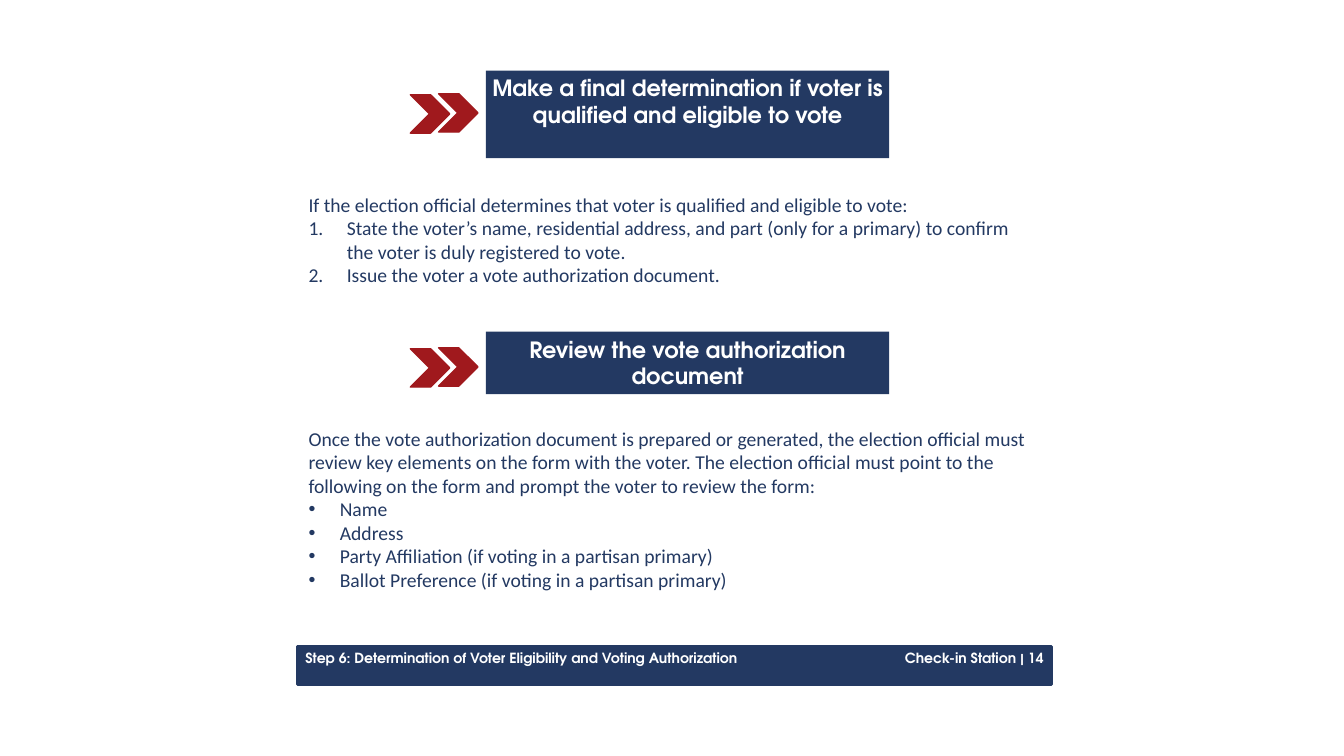
from lxml.etree import SubElement
from pptx import Presentation
from pptx.dml.color import RGBColor
from pptx.enum.shapes import MSO_SHAPE
from pptx.enum.text import MSO_ANCHOR, PP_ALIGN
from pptx.oxml.ns import qn
from pptx.util import Pt

PX = 9144  # EMU per px, at 100 px to the inch
NAVY = RGBColor(0x23, 0x39, 0x62)
RED = RGBColor(0xA0, 0x19, 0x1D)
WHITE = RGBColor(0xFF, 0xFF, 0xFF)
HEADING_FONT = "TeX Gyre Adventor"


def add_block(shapes, left, top, width, height, kind=MSO_SHAPE.RECTANGLE, fill=NAVY, line=0):
    """Add a solid preset shape; line is the outline width in points."""
    block = shapes.add_shape(kind, left * PX, top * PX, width * PX, height * PX)
    block.shadow.inherit = False
    block.fill.solid()
    block.fill.fore_color.rgb = fill
    if line:
        block.line.color.rgb = fill
        block.line.width = Pt(line)
    else:
        block.line.fill.background()
    return block


def write(holder, text, items=(), font=HEADING_FONT, size=16, color=WHITE, bold=True,
          align=PP_ALIGN.LEFT, inset=(4, 4), indent=0, bullet=None):
    """Fill a shape with a paragraph and an optional list below it."""
    frame = holder.text_frame
    frame.word_wrap = True
    frame.vertical_anchor = MSO_ANCHOR.TOP
    frame.margin_left = frame.margin_right = inset[0] * PX
    frame.margin_top = frame.margin_bottom = inset[1] * PX
    for index, content in enumerate([text, *items]):
        paragraph = frame.add_paragraph() if index else frame.paragraphs[0]
        paragraph.alignment = align
        run = paragraph.add_run()
        run.text = content
        run.font.name = font
        run.font.size = Pt(size)
        run.font.bold = bold
        run.font.color.rgb = color
        if index:
            properties = paragraph._p.get_or_add_pPr()
            properties.set("marL", str(indent * PX))
            properties.set("indent", str(-indent * PX))
            if bullet == "number":
                SubElement(properties, qn("a:buAutoNum"), type="arabicPeriod")
            else:
                SubElement(properties, qn("a:buFont"), typeface="Arial")
                SubElement(properties, qn("a:buChar"), char=bullet)


presentation = Presentation()
presentation.slide_width = 1333 * PX
presentation.slide_height = 750 * PX
shapes = presentation.slides.add_slide(presentation.slide_layouts[6]).shapes

# Footer
add_block(shapes, 295, 641, 748, 38, line=2)
page_label = shapes.add_textbox(422 * PX, 640 * PX, 617 * PX, 39 * PX)
write(page_label, "Check-in Station | 14", size=10, align=PP_ALIGN.RIGHT)
step_label = shapes.add_textbox(293 * PX, 639 * PX, 498 * PX, 27 * PX)
write(step_label, "Step 6: Determination of Voter Eligibility and Voting Authorization",
      size=10, inset=(10, 5))

# Headings: text, top, height, top of the chevrons
headings = [
    ("Make a final determination if voter is qualified and eligible to vote", 70, 87, 93),
    ("Review the vote authorization document", 329, 62, 345),
]
for heading, top, height, chevron_top in headings:
    write(add_block(shapes, 482, top, 400, height), heading, align=PP_ALIGN.CENTER)
    arrows = shapes.add_group_shape().shapes
    for left, drop in ((435, 0), (407, 1)):
        add_block(arrows, left, chevron_top + drop, 39, 38, MSO_SHAPE.CHEVRON, RED, line=1)

# Instructions: top, width, height, introduction, list, indent, bullet
instructions = [
    (187, 733, 108,
     "If the election official determines that voter is qualified and eligible to vote:",
     ["State the voter’s name, residential address, and part (only for a primary) "
      "to confirm the voter is duly registered to vote.",
      "Issue the voter a vote authorization document."],
     38, "number"),
    (419, 741, 171,
     "Once the vote authorization document is prepared or generated, the election official "
     "must review key elements on the form with the voter. The election official must point "
     "to the following on the form and prompt the voter to review the form:",
     ["Name", "Address", "Party Affiliation (if voting in a partisan primary)",
      "Ballot Preference (if voting in a partisan primary)"],
     31, "•"),
]
for top, width, height, introduction, steps, indent, bullet in instructions:
    body = shapes.add_textbox(302 * PX, top * PX, width * PX, height * PX)
    write(body, introduction, steps, font="Calibri", size=14, color=NAVY, bold=False,
          indent=indent, bullet=bullet)

presentation.save("out.pptx")
